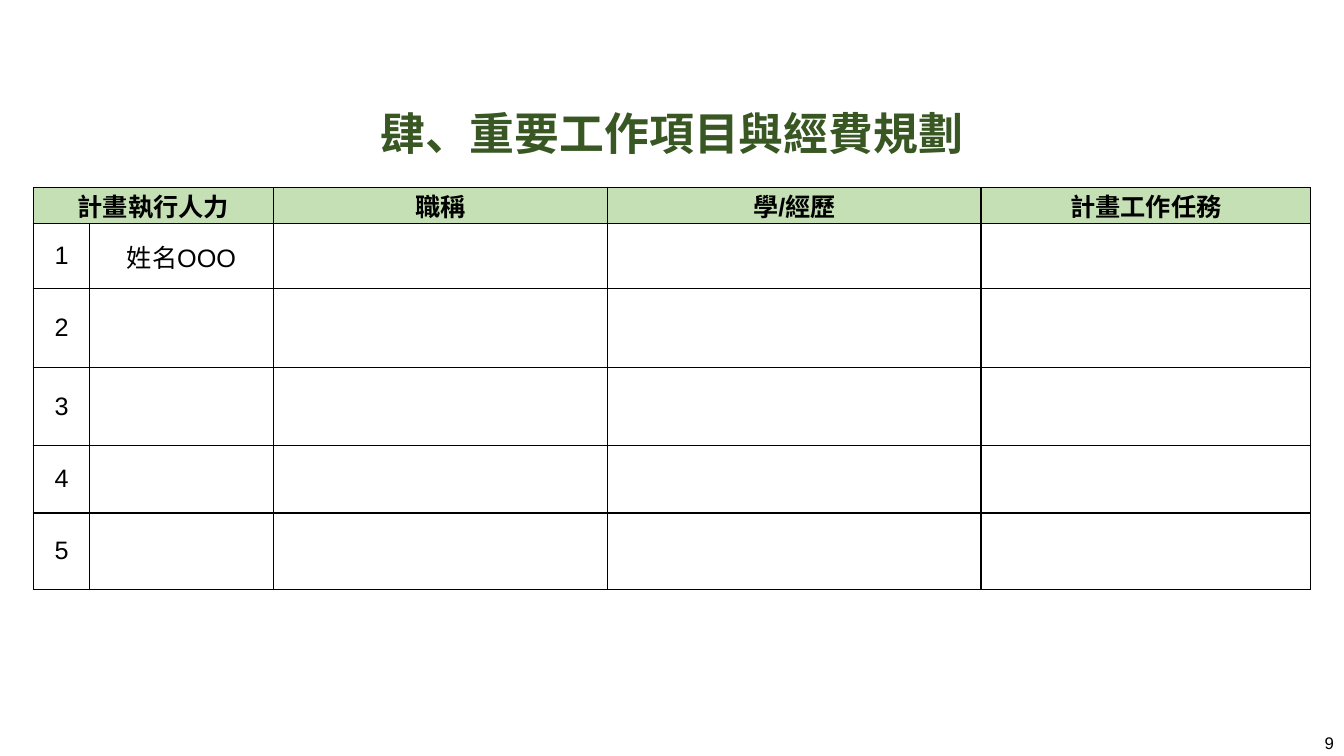
from lxml import etree
from pptx import Presentation
from pptx.dml.color import RGBColor
from pptx.enum.text import MSO_ANCHOR, PP_ALIGN
from pptx.oxml.ns import qn
from pptx.util import Inches, Pt

CENTER, RIGHT = PP_ALIGN.CENTER, PP_ALIGN.RIGHT
MIDDLE = MSO_ANCHOR.MIDDLE

THEME = {
    "black": "000000", "title": "385723", "header": "C5E0B4", "body": "FFFFFF",
    "latin": "Arial", "cjk": "Noto Sans CJK SC",
    "title_size": 32, "table_size": 18, "number_size": 12, "border": 1,
}


def write(tf, text, size, color="black", bold=False, align=CENTER):
    p = tf.paragraphs[0]
    p.alignment = align
    r = p.add_run()
    r.text = text
    fmt = {"size": Pt(size), "bold": bold, "name": THEME["latin"]}
    for key, value in fmt.items():
        setattr(r.font, key, value)
    r.font.color.rgb = RGBColor.from_string(THEME[color])
    etree.SubElement(r.font._element, qn("a:ea"), typeface=THEME["cjk"])


def style_cell(cell, fill):
    fmt = {"vertical_anchor": MIDDLE, "margin_left": Inches(0.07),
           "margin_right": Inches(0.07), "margin_top": 0, "margin_bottom": 0}
    for key, value in fmt.items():
        setattr(cell, key, value)
    tcPr = cell._tc.get_or_add_tcPr()
    for side in ("a:lnL", "a:lnR", "a:lnT", "a:lnB"):
        ln = etree.SubElement(tcPr, qn(side), w=str(Pt(THEME["border"])))
        solid = etree.SubElement(ln, qn("a:solidFill"))
        etree.SubElement(solid, qn("a:srgbClr"), val=THEME["black"])
    cell.fill.solid()
    cell.fill.fore_color.rgb = RGBColor.from_string(THEME[fill])


prs = Presentation()
prs.slide_width, prs.slide_height = Inches(13.33), Inches(7.5)
s = prs.slides.add_slide(prs.slide_layouts[6])

# Title and slide number
texts = [
    ((0, 1, 13.33, 0.64), "肆、重要工作項目與經費規劃", THEME["title_size"], "title", True, CENTER),
    ((10.33, 7.23, 3, 0.27), "9", THEME["number_size"], "black", False, RIGHT),
]
for box, *content in texts:
    tf = s.shapes.add_textbox(*map(Inches, box)).text_frame
    fmt = {"word_wrap": True, "vertical_anchor": MIDDLE, "margin_top": 0, "margin_bottom": 0}
    for key, value in fmt.items():
        setattr(tf, key, value)
    write(tf, *content)

# Staff table
headers = ["計畫執行人力", "", "職稱", "學/經歷", "計畫工作任務"]
names = ["姓名OOO", "", "", "", ""]
rows = [headers] + [[str(i), name, "", "", ""] for i, name in enumerate(names, 1)]
col_widths = [0.56, 1.82, 3.32, 3.7, 3.27]
row_heights = [0.36, 0.64, 0.79, 0.77, 0.67, 0.76]
table = s.shapes.add_table(len(rows), len(headers), Inches(0.33), Inches(1.86),
                           Inches(sum(col_widths)), Inches(sum(row_heights))).table
for col, width in zip(table.columns, col_widths):
    col.width = Inches(width)
for row, height in zip(table.rows, row_heights):
    row.height = Inches(height)
table.cell(0, 0).merge(table.cell(0, 1))

for i, row in enumerate(rows):
    for j, text in enumerate(row):
        cell = table.cell(i, j)
        style_cell(cell, "body" if i else "header")
        if text:
            write(cell.text_frame, text, THEME["table_size"], bold=i == 0)

prs.save("out.pptx")
